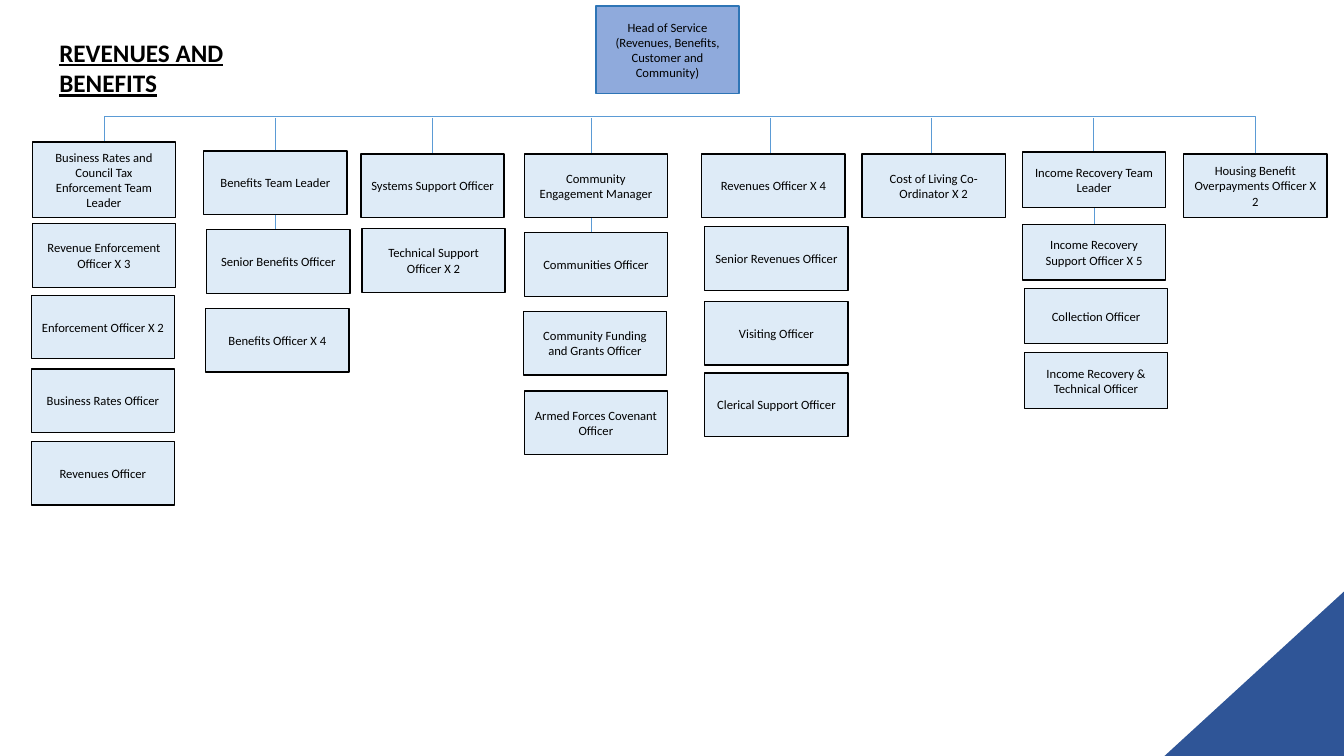
from pptx import Presentation
from pptx.dml.color import RGBColor
from pptx.enum.shapes import MSO_CONNECTOR, MSO_SHAPE
from pptx.enum.text import MSO_ANCHOR, PP_ALIGN
from pptx.oxml.ns import qn
from pptx.util import Inches, Pt
from lxml import etree

STRAIGHT, ELBOW = MSO_CONNECTOR.STRAIGHT, MSO_CONNECTOR.ELBOW
RECTANGLE, RIGHT_TRIANGLE = MSO_SHAPE.RECTANGLE, MSO_SHAPE.RIGHT_TRIANGLE
MIDDLE, CENTER = MSO_ANCHOR.MIDDLE, PP_ALIGN.CENTER

COLORS = {
    "text": "000000", "head": "8FAADC", "head_edge": "2E75B6",
    "post": "DEEBF7", "post_edge": "000000", "link": "5B9BD5",
    "corner": "2F5597",
}
FONT = "Calibri"
POST_WIDTH, POST_HEIGHT, INCOME_HEIGHT = 1.42, 0.63, 0.55
BUS_Y = 1.17

HEAD = "Head of Service (Revenues, Benefits, Customer and Community)"
POSTS = [
    (0.32, 1.41, 0.75, "Business Rates and Council Tax Enforcement Team Leader"),
    (0.32, 2.22, POST_HEIGHT, "Revenue Enforcement Officer X 3"),
    (0.31, 2.93, POST_HEIGHT, "Enforcement Officer X 2"),
    (0.31, 3.66, POST_HEIGHT, "Business Rates Officer"),
    (0.31, 4.38, POST_HEIGHT, "Revenues Officer"),
    (2.02, 1.5, POST_HEIGHT, "Benefits Team Leader"),
    (2.05, 2.28, POST_HEIGHT, "Senior Benefits Officer"),
    (2.04, 3.06, POST_HEIGHT, "Benefits Officer X 4"),
    (3.58, 1.53, POST_HEIGHT, "Systems Support Officer"),
    (3.59, 2.27, POST_HEIGHT, "Technical Support Officer X 2"),
    (5.2, 1.53, POST_HEIGHT, "Community Engagement Manager"),
    (5.2, 2.31, POST_HEIGHT, "Communities Officer"),
    (5.19, 3.09, POST_HEIGHT, "Community Funding and Grants Officer"),
    (5.2, 3.88, POST_HEIGHT, "Armed Forces Covenant Officer"),
    (6.96, 1.53, POST_HEIGHT, "Revenues Officer X 4"),
    (6.99, 2.25, POST_HEIGHT, "Senior Revenues Officer"),
    (6.99, 2.99, POST_HEIGHT, "Visiting Officer"),
    (6.99, 3.7, POST_HEIGHT, "Clerical Support Officer"),
    (8.55, 1.53, POST_HEIGHT, "Cost of Living Co-Ordinator X 2"),
    (10.14, 1.51, INCOME_HEIGHT, "Income Recovery Team Leader"),
    (10.14, 2.23, INCOME_HEIGHT, "Income Recovery Support Officer X 5"),
    (10.16, 2.86, INCOME_HEIGHT, "Collection Officer"),
    (10.16, 3.5, INCOME_HEIGHT, "Income Recovery & Technical Officer"),
    (11.74, 1.53, POST_HEIGHT, "Housing Benefit Overpayments Officer X 2"),
]
DROPS = [
    (2.73, BUS_Y, 2.51), (4.29, BUS_Y, 1.53), (5.87, BUS_Y, 2.62),
    (7.64, BUS_Y, 1.54), (9.24, BUS_Y, 1.53), (10.84, BUS_Y, 1.86),
    (10.85, 2.06, 2.23),
]


def color(key):
    """Return the named colour."""
    return RGBColor.from_string(COLORS[key])


def write(paragraph, text, size):
    """Add a run in the slide's font and return its font."""
    run = paragraph.add_run()
    run.text = text
    run.font.name = FONT
    run.font.size = Pt(size)
    run.font.color.rgb = color("text")
    return run.font


def add_post(slide, left, top, height, text, style="post"):
    """Draw one post of the organisation chart."""
    post = slide.shapes.add_shape(
        RECTANGLE, Inches(left), Inches(top), Inches(POST_WIDTH), Inches(height))
    post.shadow.inherit = False
    post.fill.solid()
    post.fill.fore_color.rgb = color(style)
    post.line.color.rgb = color(style + "_edge")
    post.line.width = Pt(1)
    frame = post.text_frame
    frame.word_wrap = True
    frame.vertical_anchor = MIDDLE
    frame.paragraphs[0].alignment = CENTER
    write(frame.paragraphs[0], text, 9)


def add_link(slide, kind, x1, y1, x2, y2):
    """Draw a thin reporting line."""
    link = slide.shapes.add_connector(
        kind, Inches(x1), Inches(y1), Inches(x2), Inches(y2))
    link.line.color.rgb = color("link")
    link.line.width = Pt(0.5)
    etree.SubElement(link._element.spPr, qn("a:effectLst"))
    return link


def add_bus(slide):
    """Draw the bracket joining the first and last teams."""
    bus = add_link(slide, ELBOW, 6.68, -4.24, 6.8, 7.18)
    properties = bus._element.spPr
    frame = properties.find(qn("a:xfrm"))
    frame.set("rot", "16200000")
    frame.set("flipH", "1")
    bend = properties.find(qn("a:prstGeom")).find(qn("a:avLst"))
    etree.SubElement(bend, qn("a:gd"), name="adj1", fmla="val -212200")


def add_corner(slide):
    """Draw the triangle in the bottom right corner."""
    corner = slide.shapes.add_shape(
        RIGHT_TRIANGLE, Inches(11.55), Inches(5.86), Inches(1.79), Inches(1.64))
    corner.shadow.inherit = False
    corner.fill.solid()
    corner.fill.fore_color.rgb = color("corner")
    corner.line.fill.background()
    corner._element.spPr.find(qn("a:xfrm")).set("flipH", "1")


def add_title(slide):
    """Write the underlined heading."""
    title = slide.shapes.add_textbox(
        Inches(0.49), Inches(0.32), Inches(2.5), Inches(0.71))
    title.text_frame.word_wrap = True
    font = write(title.text_frame.paragraphs[0], "REVENUES AND BENEFITS", 18)
    font.bold = True
    font.underline = True


def main():
    """Build and save the organisation chart."""
    deck = Presentation()
    deck.slide_width, deck.slide_height = Inches(13.33), Inches(7.5)
    slide = deck.slides.add_slide(deck.slide_layouts[6])
    add_corner(slide)
    add_bus(slide)
    for x, start, end in DROPS:
        add_link(slide, STRAIGHT, x, start, x, end)
    add_post(slide, 5.91, 0.06, 0.87, HEAD, "head")
    for left, top, height, text in POSTS:
        add_post(slide, left, top, height, text)
    add_title(slide)
    deck.save("out.pptx")


if __name__ == "__main__":
    main()
